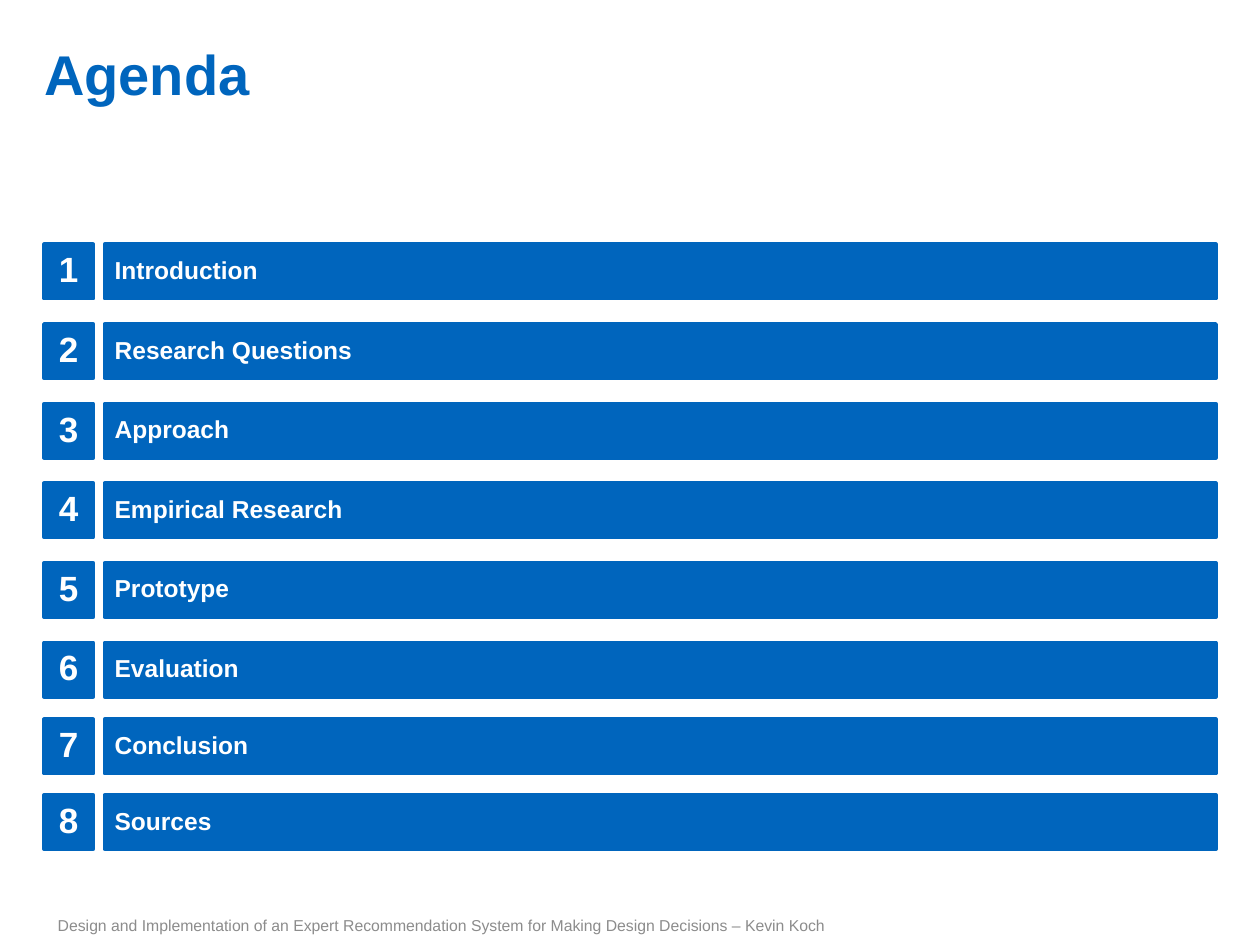
from dataclasses import dataclass

from pptx import Presentation
from pptx.dml import color
from pptx.enum import shapes, text
from pptx.util import Inches, Pt

BLUE = "0065BD"
WHITE = "FFFFFF"
GREY = "8C8C8C"
FIRST_TOP = 1.94
WIDE_PITCH = 0.632
TIGHT_TOP = 5.71
TIGHT_PITCH = 0.6
WIDE_ROWS = 6
ROW_HEIGHT = 0.43


@dataclass
class AgendaItem:
    number: int
    label: str
    top: float


def rgb(value: str) -> color.RGBColor:
    return color.RGBColor.from_string(value)


def write(box, content: str, *, size: float, fill: str, bold: bool = False,
          align=text.PP_ALIGN.LEFT, anchor=text.MSO_ANCHOR.MIDDLE,
          insets: tuple = (0.1, 0.05), spacing: float = 1.0) -> None:
    frame = box.text_frame
    frame.word_wrap = True
    frame.auto_size = text.MSO_AUTO_SIZE.NONE
    frame.vertical_anchor = anchor
    frame.margin_left = frame.margin_right = Inches(insets[0])
    frame.margin_top = frame.margin_bottom = Inches(insets[1])
    para = frame.paragraphs[0]
    para.alignment = align
    para.line_spacing = spacing
    para.space_before = Pt(0)
    span = para.add_run()
    span.text = content
    span.font.name = "Arial"
    span.font.size = Pt(size)
    span.font.bold = bold
    span.font.color.rgb = rgb(fill)


def add_bar(group, left: float, top: float, width: float, content: str,
            size: float, align) -> None:
    bar = group.shapes.add_shape(shapes.MSO_SHAPE.RECTANGLE, Inches(left), Inches(top),
                                 Inches(width), Inches(ROW_HEIGHT))
    bar.shadow.inherit = False
    bar.fill.solid()
    bar.fill.fore_color.rgb = rgb(BLUE)
    bar.line.color.rgb = rgb(BLUE)
    bar.line.width = Pt(2.25)
    write(bar, content, size=size, fill=WHITE, bold=True, align=align,
          insets=(0.08, 0.08), spacing=0.9)


def add_item(page, item: AgendaItem) -> None:
    group = page.shapes.add_group_shape()
    add_bar(group, 0.83, item.top, 8.82, item.label, 14, text.PP_ALIGN.LEFT)
    add_bar(group, 0.35, item.top, 0.39, str(item.number), 20, text.PP_ALIGN.CENTER)


def row_top(index: int) -> float:
    if index < WIDE_ROWS:
        return FIRST_TOP + index * WIDE_PITCH
    return TIGHT_TOP + (index - WIDE_ROWS) * TIGHT_PITCH


def main() -> None:
    deck = Presentation()
    deck.slide_width = Inches(10)
    deck.slide_height = Inches(7.5)
    page = deck.slides.add_slide(deck.slide_layouts[5])

    title = page.shapes.title
    title.left, title.top = Inches(0.35), Inches(0.31)
    title.width, title.height = Inches(8.57), Inches(0.54)
    write(title, "Agenda", size=32, fill=BLUE, bold=True,
          anchor=text.MSO_ANCHOR.BOTTOM, insets=(0, 0))

    footer = page.shapes.add_textbox(Inches(0.36), Inches(7.18), Inches(8.01), Inches(0.32))
    write(footer, "Design and Implementation of an Expert Recommendation System "
          "for Making Design Decisions – Kevin Koch", size=9, fill=GREY)

    labels = ["Introduction", "Research Questions", "Approach", "Empirical Research",
              "Prototype", "Evaluation", "Conclusion", "Sources"]
    for index, label in enumerate(labels):
        add_item(page, AgendaItem(index + 1, label, row_top(index)))

    deck.save("out.pptx")


if __name__ == "__main__":
    main()
